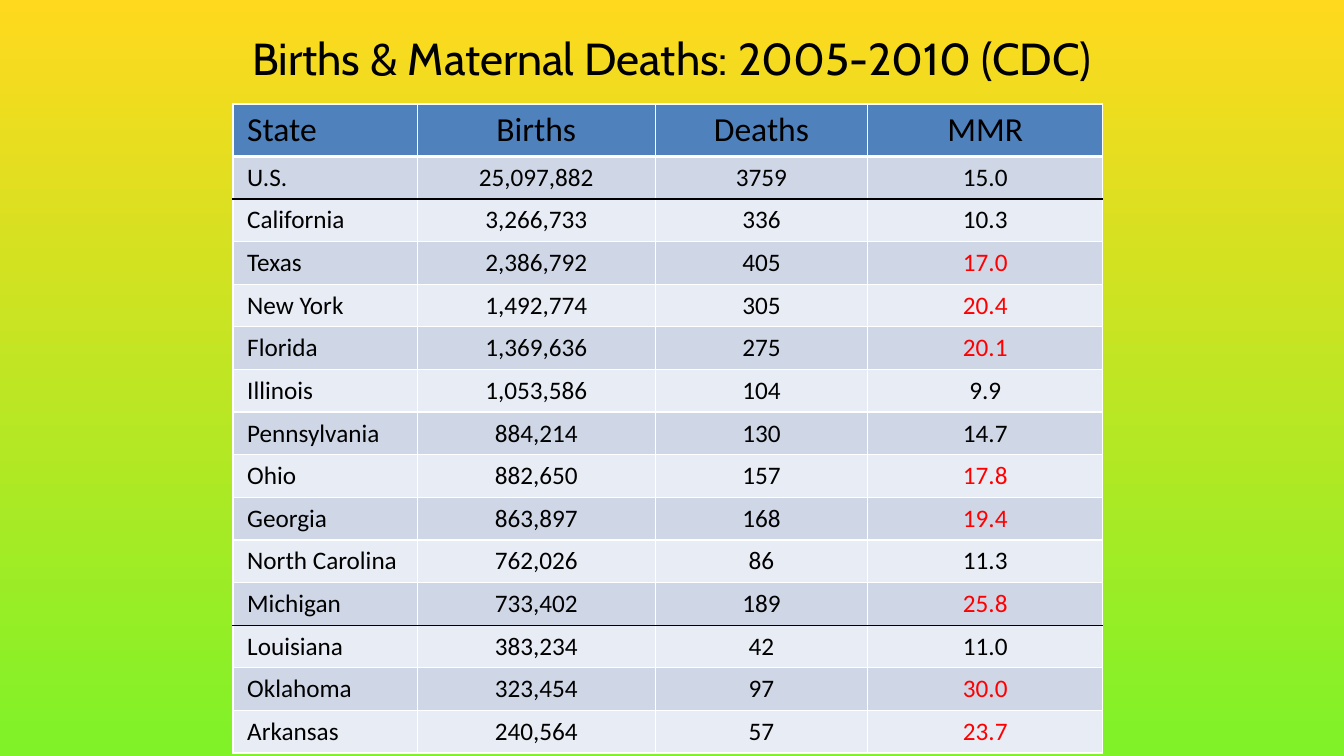
import pptx
import pptx.dml.color
import pptx.enum.text
import pptx.oxml
import pptx.oxml.ns
import pptx.util
from pptx.dml.color import RGBColor
from pptx.util import Cm

BLACK = RGBColor(0x00, 0x00, 0x00)
WHITE = RGBColor(0xFF, 0xFF, 0xFF)
RED = RGBColor(0xFF, 0x00, 0x00)
GREEN = RGBColor(0x7F, 0xF2, 0x28)
YELLOW = RGBColor(0xFF, 0xD9, 0x1E)
HEADER_BLUE = RGBColor(0x4F, 0x81, 0xBD)
BANDS = [RGBColor(0xE8, 0xEC, 0xF4), RGBColor(0xCF, 0xD7, 0xE7)]

HEADINGS = ("State", "Births", "Deaths", "MMR")
STATES = [
    ("U.S.", "25,097,882", "3759", "15.0"),
    ("California", "3,266,733", "336", "10.3"),
    ("Texas", "2,386,792", "405", "17.0"),
    ("New York", "1,492,774", "305", "20.4"),
    ("Florida", "1,369,636", "275", "20.1"),
    ("Illinois", "1,053,586", "104", "9.9"),
    ("Pennsylvania", "884,214", "130", "14.7"),
    ("Ohio", "882,650", "157", "17.8"),
    ("Georgia", "863,897", "168", "19.4"),
    ("North Carolina", "762,026", "86", "11.3"),
    ("Michigan", "733,402", "189", "25.8"),
    ("Louisiana", "383,234", "42", "11.0"),
    ("Oklahoma", "323,454", "97", "30.0"),
    ("Arkansas", "240,564", "57", "23.7"),
]
NATIONAL_MMR = float(STATES[0][3])
RULES_BELOW = {0: (WHITE, 3), 1: (BLACK, 1), 11: (BLACK, 1)}
COLUMN_WIDTHS = (4.65, 5.99, 5.36, 5.92)
HEADER_HEIGHT = 1.32
STATE_HEIGHT = 15.04 / len(STATES)


def format_text(paragraph, color, **values):
    for name, value in values.items():
        setattr(paragraph.font, name, value)
    paragraph.font.color.rgb = color


def add_border(cell, edge, color, points):
    cell._tc.get_or_add_tcPr().append(pptx.oxml.parse_xml(
        f'<a:{edge} {pptx.oxml.ns.nsdecls("a")} w="{pptx.util.Pt(points)}">'
        f'<a:solidFill><a:srgbClr val="{color}"/></a:solidFill></a:{edge}>'))


presentation = pptx.Presentation()
presentation.slide_width = Cm(33.87)
presentation.slide_height = Cm(19.05)
slide = presentation.slides.add_slide(presentation.slide_layouts[5])

backdrop = slide.background.fill
backdrop.gradient()
backdrop.gradient_angle = 90
for stop, color in zip(backdrop.gradient_stops, (GREEN, YELLOW)):
    stop.color.rgb = color

title = slide.shapes.title
title_box = {"left": Cm(5.51), "top": Cm(0.33), "width": Cm(22.86), "height": Cm(2.24)}
for name, value in title_box.items():
    setattr(title, name, value)
title_frame = {
    "text": "Births & Maternal Deaths: 2005-2010 (CDC)",
    "margin_left": 0, "margin_right": 0, "margin_top": 0, "margin_bottom": 0,
    "vertical_anchor": pptx.enum.text.MSO_ANCHOR.MIDDLE,
    "auto_size": pptx.enum.text.MSO_AUTO_SIZE.NONE,
    "word_wrap": True,
}
for name, value in title_frame.items():
    setattr(title.text_frame, name, value)
heading = title.text_frame.paragraphs[0]
heading.alignment = pptx.enum.text.PP_ALIGN.CENTER
format_text(heading, BLACK, name="Cabin", size=pptx.util.Pt(32))

mortality = slide.shapes.add_table(
    len(STATES) + 1, len(HEADINGS), Cm(5.87), Cm(2.62),
    Cm(sum(COLUMN_WIDTHS)), Cm(HEADER_HEIGHT + STATE_HEIGHT * len(STATES))).table
for column, width in zip(mortality.columns, COLUMN_WIDTHS):
    column.width = Cm(width)

cell_format = {
    "margin_left": Cm(0.03), "margin_right": Cm(0.03),
    "margin_top": Cm(0.03), "margin_bottom": Cm(0.03),
    "vertical_anchor": pptx.enum.text.MSO_ANCHOR.MIDDLE,
}
for row, entries in enumerate([HEADINGS] + STATES):
    is_header = row == 0
    mortality.rows[row].height = Cm(HEADER_HEIGHT if is_header else STATE_HEIGHT)
    for column, entry in enumerate(entries):
        cell = mortality.cell(row, column)
        cell.text = entry
        for name, value in cell_format.items():
            setattr(cell, name, value)
        for edge, rule_row in (("lnT", row - 1), ("lnB", row)):
            if rule_row in RULES_BELOW:
                add_border(cell, edge, *RULES_BELOW[rule_row])
        cell.fill.solid()
        cell.fill.fore_color.rgb = HEADER_BLUE if is_header else BANDS[row % 2]
        paragraph = cell.text_frame.paragraphs[0]
        if column == 0:
            paragraph._p.get_or_add_pPr().set("indent", str(Cm(0.33)))
        else:
            paragraph.alignment = pptx.enum.text.PP_ALIGN.CENTER
        above_national = not is_header and column == 3 and float(entry) > NATIONAL_MMR
        format_text(paragraph, RED if above_national else BLACK, name="Calibri",
                    size=pptx.util.Pt(24 if is_header else 18), bold=False)

presentation.save("out.pptx")
